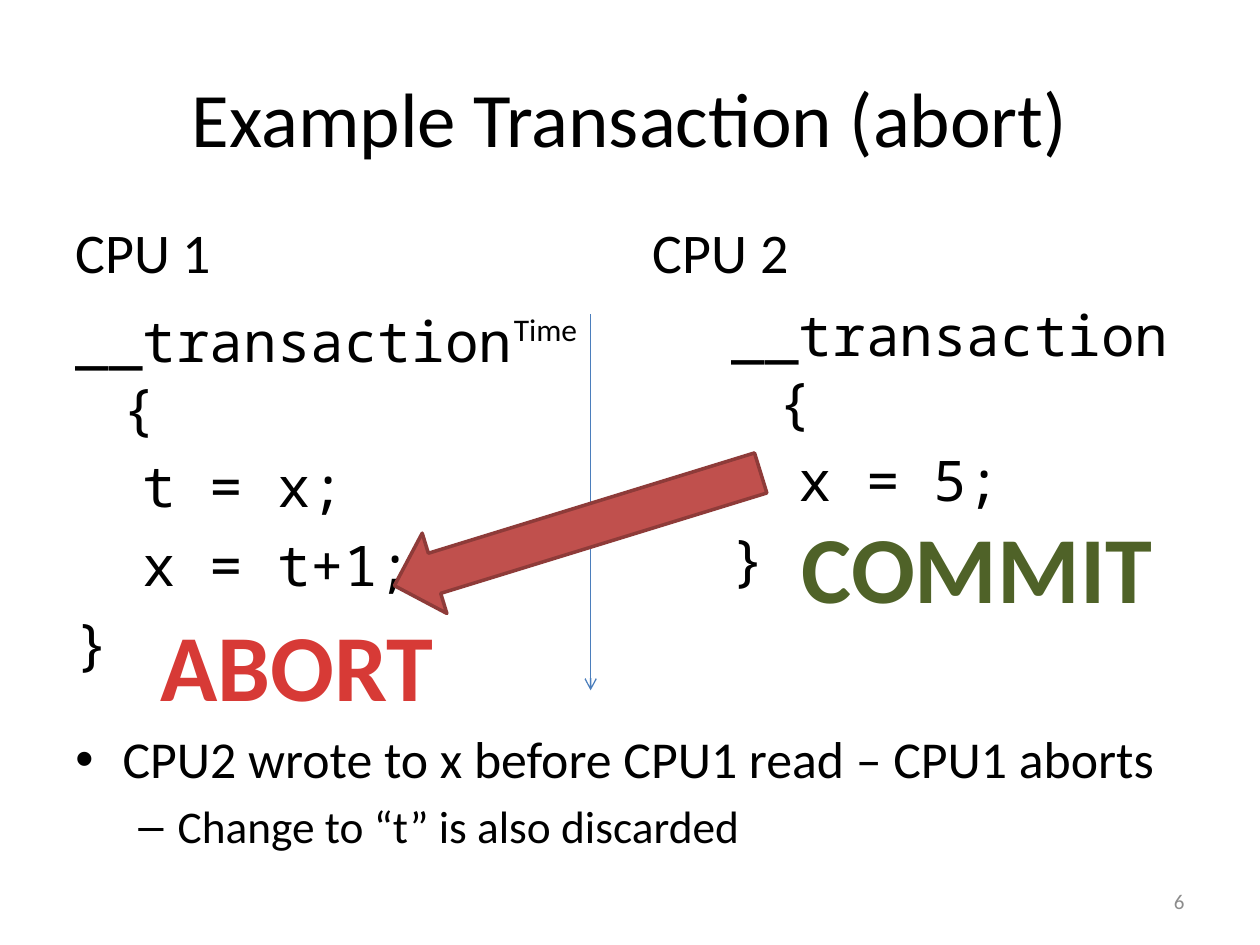
from lxml import etree
from pptx import Presentation
from pptx.dml.color import RGBColor
from pptx.enum.shapes import MSO_CONNECTOR, MSO_SHAPE
from pptx.enum.text import MSO_ANCHOR, PP_ALIGN
from pptx.oxml.ns import qn
from pptx.util import Pt

LEFT, CENTER, RIGHT = PP_ALIGN.LEFT, PP_ALIGN.CENTER, PP_ALIGN.RIGHT
TOP, MIDDLE = MSO_ANCHOR.TOP, MSO_ANCHOR.MIDDLE
DOWN_ARROW, STRAIGHT = MSO_SHAPE.DOWN_ARROW, MSO_CONNECTOR.STRAIGHT

BLACK = RGBColor(0x00, 0x00, 0x00)
GRAY = RGBColor(0x8C, 0x8C, 0x8C)
BLUE = RGBColor(0x4B, 0x7E, 0xBC)
RED = RGBColor(0xC0, 0x50, 0x4D)
DARK_RED = RGBColor(0x8E, 0x3B, 0x39)
ABORT_RED = RGBColor(0xD7, 0x3A, 0x36)
COMMIT_GREEN = RGBColor(0x4F, 0x62, 0x28)

BODY_FONT, CODE_FONT = "Calibri", "Noto Sans Mono"
HANGING = (27, -27)


def format_paragraph(paragraph, size, color=BLACK, font=BODY_FONT, bold=False,
                     align=LEFT, indent=(0, 0), before=0, bullet=None):
    paragraph.alignment = align
    paragraph.space_before = Pt(before)
    for name, value in {"size": Pt(size), "name": font, "bold": bold}.items():
        setattr(paragraph.runs[0].font, name, value)
    paragraph.runs[0].font.color.rgb = color
    properties = paragraph._p.get_or_add_pPr()
    for name, value in zip(("marL", "indent"), indent):
        properties.set(name, str(Pt(value)))
    if bullet:
        etree.SubElement(properties, qn("a:buFont")).set("typeface", "Arial")
        etree.SubElement(properties, qn("a:buChar")).set("char", bullet)


def add_text(box, lines, wrap=True, anchor=TOP, **formats):
    frame = slide.shapes.add_textbox(*map(Pt, box)).text_frame
    frame.word_wrap = wrap
    frame.vertical_anchor = anchor
    frame.text = "\n".join(lines)
    for paragraph in frame.paragraphs:
        format_paragraph(paragraph, **formats)
    return frame


prs = Presentation()
prs.slide_width, prs.slide_height = Pt(720), Pt(540)
slide = prs.slides.add_slide(prs.slide_layouts[5])

title = slide.shapes.title
title.left, title.top, title.width, title.height = Pt(36), Pt(21.6), Pt(648), Pt(90)
title.text_frame.text = "Example Transaction (abort)"
title.text_frame.vertical_anchor = MIDDLE
format_paragraph(title.text_frame.paragraphs[0], 44, align=CENTER)

explanation = add_text((36, 412, 648, 70.5),
                       ["CPU2 wrote to x before CPU1 read – CPU1 aborts",
                        "Change to “t” is also discarded"], size=29.6)
outcome, consequence = explanation.paragraphs
format_paragraph(outcome, 29.6, indent=HANGING, before=5.9, bullet="•")
consequence.level = 1
format_paragraph(consequence, 25.9, indent=(58.5, -22.5), before=5.2, bullet="–")

cpus = [
    ("CPU 1", 36, (36, 171.5, 278.5, 189),
     ["__transaction {", "  t = x;", "  x = t+1;", "}"]),
    ("CPU 2", 366, (411, 168, 273, 183.5),
     ["__transaction {", "  x = 5;", "}"]),
]
for cpu, heading_left, code_box, code in cpus:
    add_text((heading_left, 121, 318, 50.5), [cpu],
             size=32, indent=HANGING, before=6.4)
    add_text(code_box, code, size=32, font=CODE_FONT, indent=HANGING, before=6.4)

time_axis = slide.shapes.add_connector(STRAIGHT, Pt(337.5), Pt(179.5), Pt(337.5), Pt(394.5))
time_axis.line.color.rgb = BLUE
time_axis.line.width = Pt(0.75)
etree.SubElement(time_axis.line._get_or_add_ln(), qn("a:tailEnd")).set("type", "arrow")
etree.SubElement(time_axis._element.spPr, qn("a:effectLst"))
add_text((286.5, 173.5, 51, 29), ["Time"], wrap=False, size=18)

conflict = slide.shapes.add_shape(DOWN_ARROW, Pt(306), Pt(193), Pt(48), Pt(219))
conflict.rotation = 72.9
conflict.shadow.inherit = False
conflict.fill.solid()
conflict.fill.fore_color.rgb = RED
conflict.line.color.rgb = DARK_RED
conflict.line.width = Pt(2)

for verdict, box, color in [("ABORT", (82, 343.5, 175.5, 72.5), ABORT_RED),
                            ("COMMIT", (439, 287.5, 238.5, 72.5), COMMIT_GREEN)]:
    add_text(box, [verdict], size=54, color=color, bold=True, align=CENTER)

add_text((516, 500.5, 168, 29), ["6"], anchor=MIDDLE, size=12, color=GRAY, align=RIGHT)

prs.save("out.pptx")
